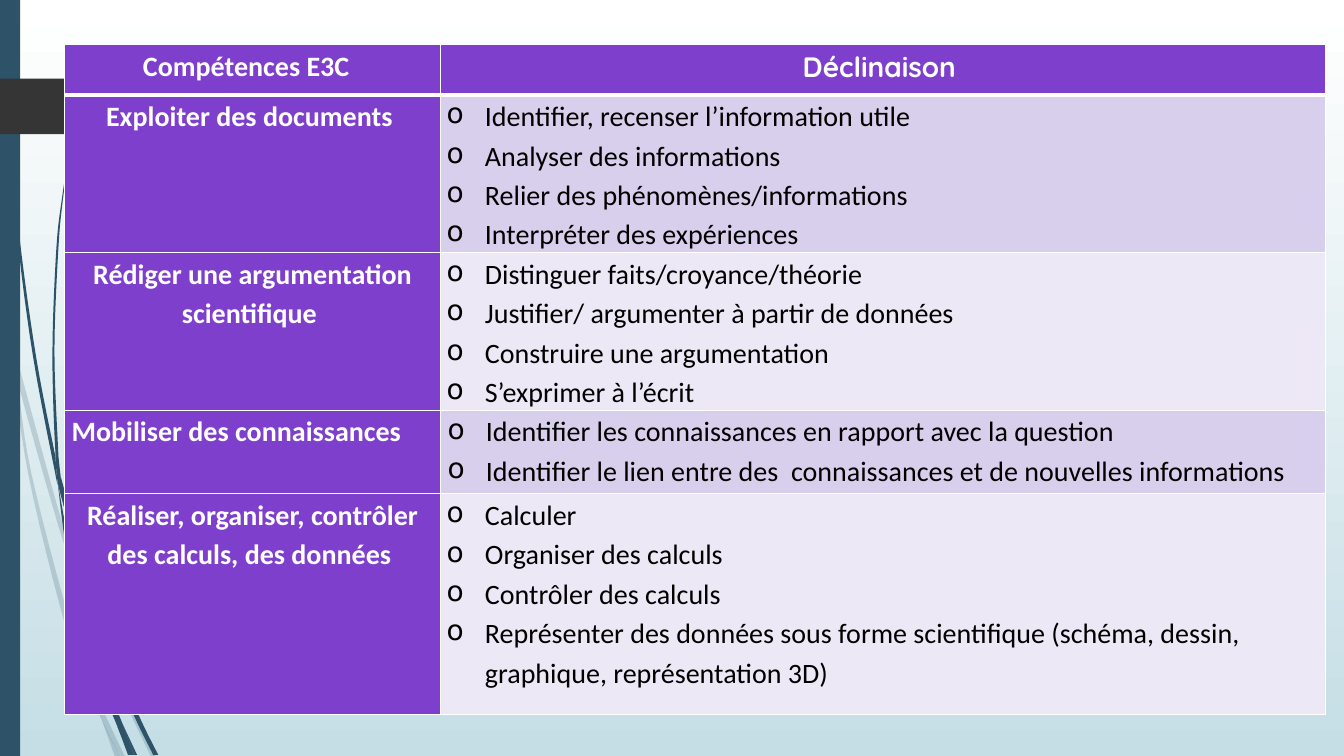
from lxml.etree import SubElement
from pptx import Presentation
from pptx.dml.color import RGBColor
from pptx.enum.shapes import MSO_SHAPE
from pptx.enum.text import PP_ALIGN
from pptx.oxml import parse_xml
from pptx.oxml.ns import nsdecls, qn
from pptx.util import Inches, Pt

WHITE = RGBColor(0xFF, 0xFF, 0xFF)
BLACK = RGBColor(0x00, 0x00, 0x00)
SKY = RGBColor(0xC5, 0xDE, 0xE5)
NAVY = RGBColor(0x2E, 0x53, 0x69)
CHARCOAL = RGBColor(0x35, 0x35, 0x35)
PURPLE = RGBColor(0x7E, 0x40, 0xCC)
LILAC = RGBColor(0xD8, 0xCF, 0xEC)
PALE_LILAC = RGBColor(0xEC, 0xE8, 0xF6)

PALE_BLADES = [
    ([(0.11, 3.5), (0.09, 3.22), (0, 2.82)], [(0, 2.99), (0.1, 3.44), (0.11, 3.5)]),
    ([(0.14, 3.45), (0.17, 3.76), (0.58, 5.22), (0.84, 5.99)],
     [(0.85, 5.86), (0.62, 5.2), (0.14, 3.45)]),
    ([(0.88, 5.96), (0.88, 6.1), (1.23, 6.94), (1.5, 7.51)],
     [(1.55, 7.51), (1.27, 6.92), (0.92, 6.07), (0.88, 5.96)]),
    ([(1.05, 7.11), (1.19, 7.51)], [(1.24, 7.51), (1.05, 7.11)]),
    ([(0.11, 3.5), (0.28, 4.7), (0.65, 6.21), (0.92, 6.93), (1.01, 7.14)],
     [(0.93, 6.83), (0.7, 6.19), (0.31, 4.69), (0.17, 3.76), (0.11, 3.5)]),
    ([(1.01, 7.14), (1.14, 7.51)], [(1.19, 7.51), (1.01, 7.14)]),
    ([(0.93, 6.83), (1.01, 7.14), (1.19, 7.51)], [(1.05, 7.11), (0.93, 6.83)]),
]
DARK_BLADES = [
    ([(0.03, 0), (0.04, 0.48), (0.07, 1.1), (0.17, 2.33), (0.33, 3.55), (0.57, 4.81)],
     [(0.55, 4.53), (0.36, 3.55), (0.19, 2.32), (0.08, 1.09), (0.04, 0)]),
    ([(0.6, 4.72), (0.64, 5.05), (0.88, 5.92), (1.06, 6.45)],
     [(1.06, 6.31), (0.93, 5.9), (0.6, 4.72)]),
    ([(1.1, 6.41), (1.11, 6.56), (1.32, 7.08), (1.52, 7.49)],
     [(1.57, 7.49), (1.36, 7.06), (1.1, 6.41)]),
    ([(0.57, 4.77), (0.68, 5.57), (0.93, 6.59), (1.17, 7.22)],
     [(1.1, 6.91), (0.98, 6.57), (0.72, 5.56), (0.57, 4.77)]),
    ([(0.7, 1.41), (0.62, 1.93), (0.56, 2.45), (0.52, 3.49), (0.55, 4.49), (0.6, 4.72)],
     [(0.58, 4.53), (0.54, 3.49), (0.58, 2.45), (0.63, 1.93), (0.7, 1.41)]),
    ([(1.22, 7.19), (1.33, 7.49)], [(1.36, 7.49), (1.22, 7.19)]),
    ([(0.55, 4.49), (0.57, 4.77), (0.64, 5.05)], [(0.6, 4.72), (0.55, 4.49)]),
    ([(1.17, 7.22), (1.27, 7.49)], [(1.31, 7.49), (1.17, 7.22)]),
    ([(1.1, 6.91), (1.17, 7.22), (1.3, 7.49)], [(1.33, 7.49), (1.22, 7.19), (1.1, 6.91)]),
]

HEADERS = [("Compétences E3C  ", "Calibri"), ("Déclinaison ", "Quicksand")]
COLUMN_WIDTHS = [3.73, 8.78]
ROW_HEIGHTS = [0.5, 1.46, 1.46, 0.83, 2.19]
TABLE_HEIGHT = 6.58
SKILLS = [
    ("Exploiter des documents ", PP_ALIGN.CENTER, 0.06, [
        "Identifier, recenser l’information utile",
        "Analyser des informations",
        "Relier des phénomènes/informations",
        "Interpréter des expériences"]),
    ("Rédiger une argumentation scientifique ", PP_ALIGN.CENTER, 0.06, [
        "Distinguer faits/croyance/théorie",
        "Justifier/ argumenter à partir de données",
        "Construire une argumentation",
        "S’exprimer à l’écrit"]),
    ("Mobiliser des connaissances", PP_ALIGN.LEFT, 0.07, [
        "Identifier les connaissances en rapport avec la question",
        "Identifier le lien entre des  connaissances et de nouvelles informations"]),
    ("Réaliser, organiser, contrôler des calculs, des données ", PP_ALIGN.CENTER, 0.06, [
        "Calculer",
        "Organiser des calculs",
        "Contrôler des calculs",
        "Représenter des données sous forme scientifique "
        "(schéma, dessin, graphique, représentation 3D)"]),
]


def paint_background(slide):
    """Fill the slide with a vertical white to sky gradient."""
    fill = slide.background.fill
    fill.gradient()
    fill.gradient_angle = 270
    for stop, color in zip(fill.gradient_stops, (WHITE, SKY)):
        stop.color.rgb = color


def style_shape(shape, color):
    """Give a shape a flat fill without line or shadow."""
    shape.shadow.inherit = False
    shape.fill.solid()
    shape.fill.fore_color.rgb = color
    shape.line.fill.background()


def add_block(slide, preset, left, top, width, height, color):
    """Add a flat preset shape."""
    shape = slide.shapes.add_shape(
        preset, Inches(left), Inches(top), Inches(width), Inches(height))
    style_shape(shape, color)


def smooth_edge(points, steps=6):
    """Return points along a Catmull-Rom curve through the given points."""
    padded = [points[0], *points, points[-1]]
    curve = [points[0]]
    for a, b, c, d in zip(padded, padded[1:], padded[2:], padded[3:]):
        for step in range(1, steps + 1):
            t = step / steps
            curve.append(tuple(
                b[i] + 0.5 * t * (c[i] - a[i]
                + t * (2 * a[i] - 5 * b[i] + 4 * c[i] - d[i]
                + t * (3 * b[i] - a[i] - 3 * c[i] + d[i])))
                for i in (0, 1)))
    return curve


def add_blade(slide, edges, opacity):
    """Add a curved piece of grass between two edges."""
    outline = [(Inches(x), Inches(y)) for edge in edges for x, y in smooth_edge(edge)]
    builder = slide.shapes.build_freeform(*outline[0])
    builder.add_line_segments(outline[1:], close=True)
    blade = builder.convert_to_shape()
    style_shape(blade, NAVY)
    if opacity < 100:
        color = blade.fill._xPr.find(qn("a:solidFill"))[0]
        SubElement(color, qn("a:alpha"), val=str(opacity * 1000))


def add_bullet(paragraph):
    """Give a paragraph a hanging round bullet."""
    properties = paragraph._p.get_or_add_pPr()
    properties.set("marL", str(Inches(0.38)))
    properties.set("indent", str(-Inches(0.38)))
    SubElement(properties, qn("a:buChar"), char="o")


def set_borders(cell, bottom_width):
    """Draw white borders around a cell."""
    properties = cell._tc.get_or_add_tcPr()
    for index, (side, width) in enumerate(zip("LRTB", (1, 1, 1, bottom_width))):
        properties.insert(index, parse_xml(
            f'<a:ln{side} {nsdecls("a")} w="{Pt(width)}"><a:solidFill>'
            f'<a:srgbClr val="{WHITE}"/></a:solidFill></a:ln{side}>'))


def fill_cell(cell, lines, fill, color, align=PP_ALIGN.LEFT, margin=0.06,
              font="Calibri", bold=False, bulleted=False, bottom_width=1):
    """Write the lines of a cell and format it."""
    cell.fill.solid()
    cell.fill.fore_color.rgb = fill
    cell.margin_left = cell.margin_right = Inches(margin)
    cell.margin_top = cell.margin_bottom = 0
    set_borders(cell, bottom_width)
    cell.text_frame.text = "\n".join(lines)
    for paragraph in cell.text_frame.paragraphs:
        paragraph.alignment = align
        paragraph.line_spacing = 1.15
        if bulleted:
            add_bullet(paragraph)
        for run in paragraph.runs:
            run.font.name = font
            run.font.size = Pt(20)
            run.font.bold = bold
            run.font.color.rgb = color


def add_skills_table(slide):
    """Add the table of skills and their details."""
    frame = slide.shapes.add_table(
        len(ROW_HEIGHTS), len(COLUMN_WIDTHS), Inches(0.64), Inches(0.44),
        Inches(sum(COLUMN_WIDTHS)), Inches(TABLE_HEIGHT))
    table = frame.table
    for column, width in zip(table.columns, COLUMN_WIDTHS):
        column.width = Inches(width)
    for row, height in zip(table.rows, ROW_HEIGHTS):
        row.height = Inches(height)
    frame.height = Inches(TABLE_HEIGHT)
    for column, (title, font) in enumerate(HEADERS):
        fill_cell(table.cell(0, column), [title], PURPLE, WHITE, PP_ALIGN.CENTER,
                  font=font, bold=True, bottom_width=3)
    for row, (skill, align, margin, details) in enumerate(SKILLS, start=1):
        fill_cell(table.cell(row, 0), [skill], PURPLE, WHITE, align, margin, bold=True)
        fill_cell(table.cell(row, 1), details, LILAC if row % 2 else PALE_LILAC,
                  BLACK, margin=margin, bulleted=True)


def main():
    """Build the slide and save it."""
    presentation = Presentation()
    presentation.slide_width = Inches(13.33)
    presentation.slide_height = Inches(7.5)
    slide = presentation.slides.add_slide(presentation.slide_layouts[6])
    paint_background(slide)
    for blades, opacity in ((PALE_BLADES, 20), (DARK_BLADES, 100)):
        for edges in blades:
            add_blade(slide, edges, opacity)
    add_block(slide, MSO_SHAPE.RECTANGLE, 0, 0, 0.2, 7.5, NAVY)
    add_block(slide, MSO_SHAPE.PENTAGON, 0, 0.78, 1.74, 0.55, CHARCOAL)
    add_skills_table(slide)
    presentation.save("out.pptx")


if __name__ == "__main__":
    main()
